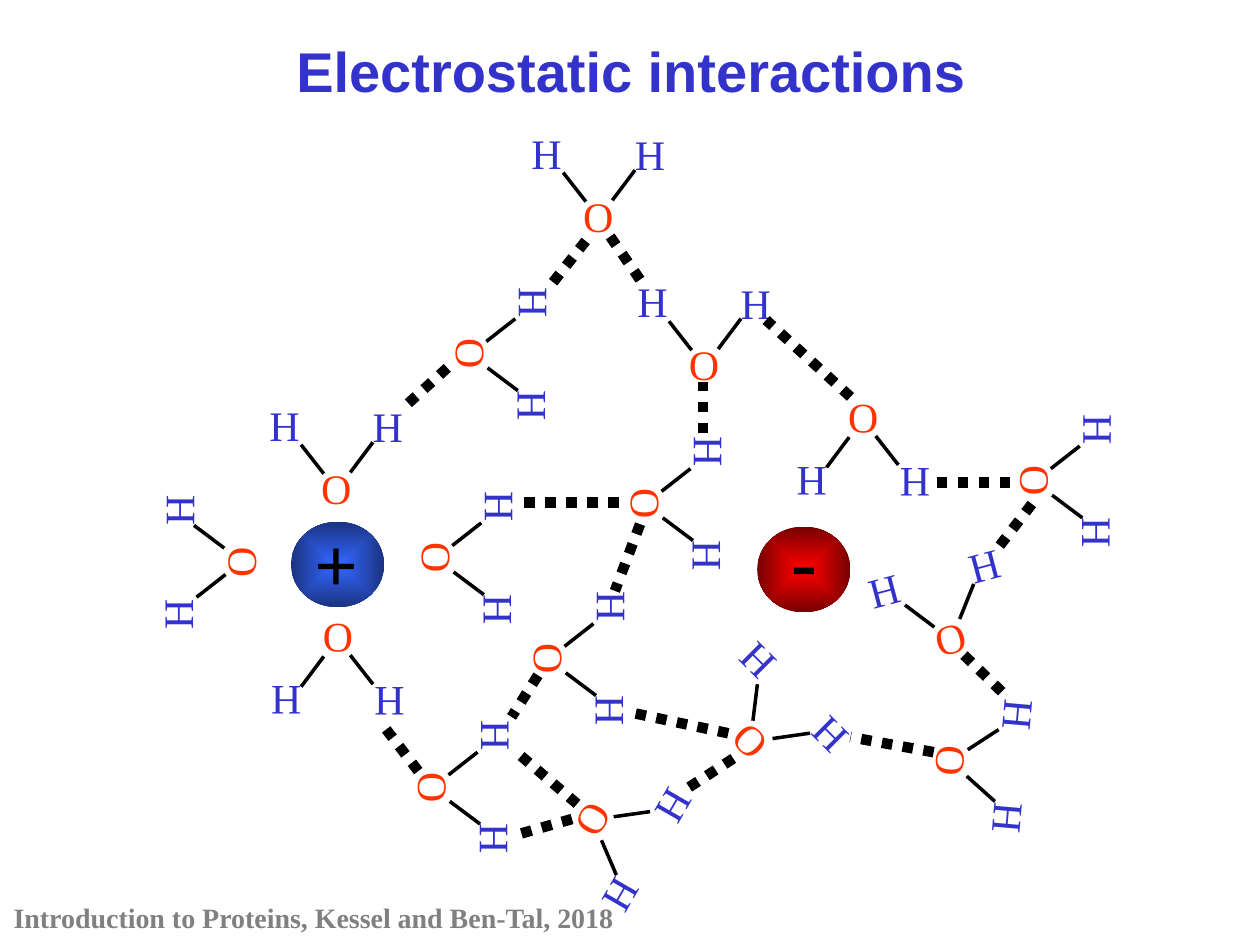
import dataclasses
import math

import lxml.etree
import pptx
import pptx.dml.color
import pptx.enum.dml
import pptx.enum.shapes
import pptx.enum.text
import pptx.oxml
import pptx.oxml.ns
import pptx.util

COLUMNS, ROWS = 10, 7.5
CELL = pptx.util.Inches(1)
BLACK, GREY, BLUE, ORANGE = "000000", "808080", "3333CC", "FF3300"
SERIF, SANS = "Times New Roman", "Arial"
ATOM_SIZE = 0.5
ION_SIZE = (0.74, 0.68)
HYDROGEN_OFFSETS = ((-0.41, -0.5), (0.41, -0.49))
COVALENT_BONDS = (((-0.31, -0.34), (-0.13, -0.11)), ((0.26, -0.36), (0.08, -0.12)))


@dataclasses.dataclass(frozen=True)
class Water:
    """A water molecule given by its oxygen centre and its clockwise turn."""

    column: float
    row: float
    angle: float = 0

    def place(self, offset: tuple) -> tuple:
        """Turn an offset with the molecule and return its place on the grid."""
        x, y = offset
        cosine, sine = math.cos(math.radians(self.angle)), math.sin(math.radians(self.angle))
        return self.column + x * cosine - y * sine, self.row + x * sine + y * cosine


@dataclasses.dataclass(frozen=True)
class HydrogenBond:
    """A dotted bond between two points of the grid."""

    start: tuple
    end: tuple


@dataclasses.dataclass(frozen=True)
class Ion:
    """A charged ball with its sign and the place of the sign's box."""

    sign: str
    corner: tuple
    sign_corner: tuple
    inner: str
    outer: str


WATERS = (
    Water(2.7, 3.87), Water(2.65, 5.09, 180), Water(6.82, 3.35, 180),
    Water(3.48, 4.46, 90), Water(1.9, 4.43, 270), Water(5.14, 4.03, 90),
    Water(5.99, 5.89, 45), Water(5.62, 2.89), Water(4.37, 5.26, 90),
    Water(8.23, 3.85, 90), Water(3.75, 2.84, 90), Water(7.57, 5.05, 345),
    Water(3.45, 6.28, 90), Water(4.78, 1.71), Water(4.71, 6.54, 120),
    Water(7.56, 6.07, 95),
)
HYDROGEN_BONDS = (
    HydrogenBond((4.91, 3.99), (4.1, 3.99)), HydrogenBond((5.58, 3.44), (5.58, 3.03)),
    HydrogenBond((6.75, 3.15), (6.08, 2.54)), HydrogenBond((5.08, 4.16), (4.88, 4.69)),
    HydrogenBond((5.78, 5.82), (5.03, 5.66)), HydrogenBond((8.02, 3.83), (7.39, 3.83)),
    HydrogenBond((3.55, 2.92), (3.22, 3.22)), HydrogenBond((8.19, 4), (7.92, 4.35)),
    HydrogenBond((4.27, 5.36), (4.06, 5.69)), HydrogenBond((3.32, 6.12), (3.02, 5.73)),
    HydrogenBond((5.08, 2.22), (4.81, 1.83)), HydrogenBond((4.39, 2.24), (4.69, 1.86)),
    HydrogenBond((4.58, 6.38), (4.1, 5.97)), HydrogenBond((4.54, 6.5), (4.12, 6.62)),
    HydrogenBond((5.82, 6.02), (5.42, 6.28)), HydrogenBond((7.95, 5.49), (7.6, 5.15)),
    HydrogenBond((7.41, 5.97), (6.75, 5.85)),
)
IONS = (
    Ion("+", (2.31, 4.14), (2.4, 4.04), "3366FF", "1A3380"),
    Ion("-", (6.01, 4.18), (6.18, 4.02), "FF0000", "760000"),
)


def cells(*counts: float) -> list:
    """Turn counts of grid cells into lengths."""
    return [round(count * CELL) for count in counts]


def color(value: str) -> pptx.dml.color.RGBColor:
    """Turn a hex string into a colour."""
    return pptx.dml.color.RGBColor.from_string(value)


def add_text(slide, text: str, box: tuple, *, size: float = 24, fill: str = BLACK,
             font: str = SERIF, bold: bool = False, angle: float = 0,
             centered: bool = False) -> None:
    """Add a text box with one formatted paragraph."""
    shape = slide.shapes.add_textbox(*cells(*box))
    shape.rotation = angle
    shape.text_frame.word_wrap = True
    paragraph = shape.text_frame.paragraphs[0]
    alignments = pptx.enum.text.PP_ALIGN
    paragraph.alignment = alignments.CENTER if centered else alignments.LEFT
    run = paragraph.add_run()
    run.text = text
    run.font.name = font
    run.font.size = pptx.util.Pt(size)
    run.font.bold = bold
    run.font.color.rgb = color(fill)


def add_line(slide, start: tuple, end: tuple, *, width: float = 2, dotted: bool = False) -> None:
    """Add a straight black line without a shadow."""
    connector = slide.shapes.add_connector(
        pptx.enum.shapes.MSO_CONNECTOR.STRAIGHT, *cells(*start, *end))
    connector.line.color.rgb = color(BLACK)
    connector.line.width = pptx.util.Pt(width)
    if dotted:
        connector.line.dash_style = pptx.enum.dml.MSO_LINE.ROUND_DOT
    properties = connector._element.spPr
    lxml.etree.SubElement(properties, pptx.oxml.ns.qn("a:effectLst"))


def add_water(slide, water: Water) -> None:
    """Draw the three atoms and two bonds of a water molecule."""
    atoms = [("H", offset, BLUE) for offset in HYDROGEN_OFFSETS] + [("O", (0, 0), ORANGE)]
    for symbol, offset, fill in atoms:
        column, row = water.place(offset)
        box = (column - ATOM_SIZE / 2, row - ATOM_SIZE / 2, ATOM_SIZE, ATOM_SIZE)
        add_text(slide, symbol, box, fill=fill, angle=water.angle)
    for start, end in COVALENT_BONDS:
        add_line(slide, water.place(start), water.place(end))


def add_ion(slide, ion: Ion) -> None:
    """Draw an ion as a ball shaded from its centre, with its sign."""
    shape = slide.shapes.add_shape(
        pptx.enum.shapes.MSO_SHAPE.OVAL, *cells(*ion.corner, *ION_SIZE))
    shape.shadow.inherit = False
    shape.line.fill.background()
    shape.fill.gradient()
    for stop, value in zip(shape.fill.gradient_stops, (ion.inner, ion.outer)):
        stop.color.rgb = color(value)
    linear = shape._element.spPr.find(".//" + pptx.oxml.ns.qn("a:lin"))
    linear.getparent().replace(linear, pptx.oxml.parse_xml(
        f'<a:path {pptx.oxml.ns.nsdecls("a")} path="shape">'
        '<a:fillToRect l="50000" t="50000" r="50000" b="50000"/></a:path>'))
    add_text(slide, ion.sign, (*ion.sign_corner, 0.76, 0.83), size=44, bold=True)


def main() -> None:
    """Build the slide and save it."""
    presentation = pptx.Presentation()
    presentation.slide_width, presentation.slide_height = cells(COLUMNS, ROWS)
    slide = presentation.slides.add_slide(presentation.slide_layouts[6])
    add_text(slide, "Introduction to Proteins, Kessel and Ben-Tal, 2018",
             (0.01, 7.1, 5.07, 0.37), size=16, fill=GREY, bold=True)
    for water in WATERS:
        add_water(slide, water)
    for bond in HYDROGEN_BONDS:
        add_line(slide, bond.start, bond.end, width=6, dotted=True)
    for ion in IONS:
        add_ion(slide, ion)
    add_text(slide, "Electrostatic interactions", (0.17, 0.24, 9.68, 0.63),
             size=32, fill=BLUE, font=SANS, bold=True, centered=True)
    presentation.save("out.pptx")


if __name__ == "__main__":
    main()
